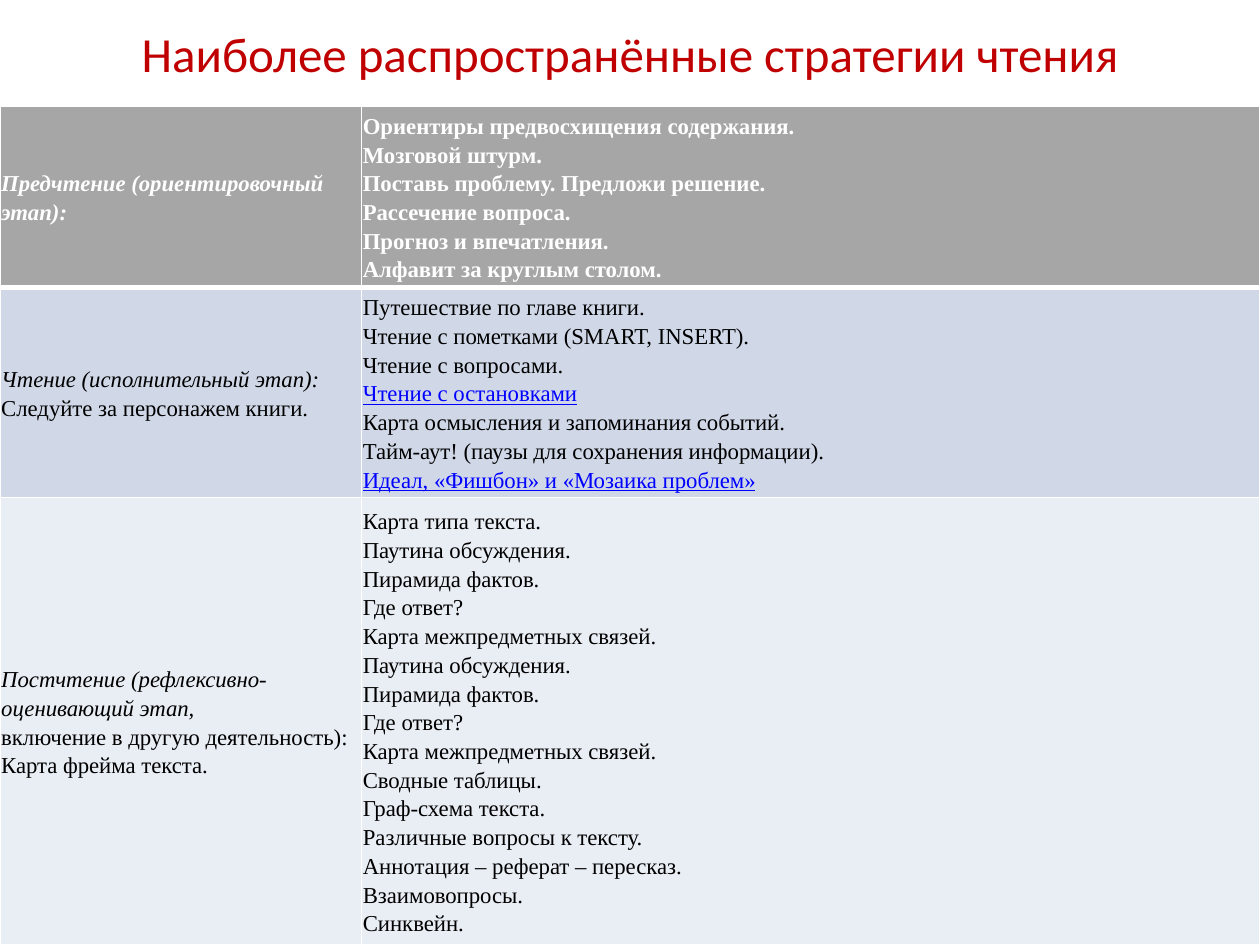
import dataclasses

import lxml.etree
import pptx
import pptx.dml.color
import pptx.enum.text
import pptx.oxml.ns
import pptx.table
import pptx.text.text
import pptx.util

Inches = pptx.util.Inches
Pt = pptx.util.Pt

WHITE = "FFFFFF"
BLACK = "000000"
LINK_BLUE = "0000FF"
COLUMN_WIDTHS = (2.87, 7.13)
CELL_INSET = Inches(0.01)
LINKED = {"Чтение с остановками", "Идеал, «Фишбон» и «Мозаика проблем»"}


@dataclasses.dataclass
class Stage:
    heading: str
    details: list[str]
    strategies: list[str]
    height: float
    fill: str
    is_header: bool = False


DISCUSSION = [
    "Паутина обсуждения.",
    "Пирамида фактов.",
    "Где ответ?",
    "Карта межпредметных связей.",
]

STAGES = [
    Stage(
        "Предчтение (ориентировочный этап):",
        [],
        [
            "Ориентиры предвосхищения содержания.",
            "Мозговой штурм.",
            "Поставь проблему. Предложи решение.",
            "Рассечение вопроса.",
            "Прогноз и впечатления.",
            "Алфавит за круглым столом.",
        ],
        1.44, "A6A6A6", is_header=True,
    ),
    Stage(
        "Чтение (исполнительный этап):",
        ["Следуйте за персонажем книги."],
        [
            "Путешествие по главе книги.",
            "Чтение с пометками (SMART, INSERT).",
            "Чтение с вопросами.",
            "Чтение с остановками",
            "Карта осмысления и запоминания событий.",
            "Тайм-аут! (паузы для сохранения информации).",
            "Идеал, «Фишбон» и «Мозаика проблем»",
        ],
        1.67, "D0D8E8",
    ),
    Stage(
        "Постчтение (рефлексивно-оценивающий этап,",
        ["включение в другую деятельность):", "Карта фрейма текста."],
        [
            "Карта типа текста.",
            *DISCUSSION,
            *DISCUSSION,
            "Сводные таблицы.",
            "Граф-схема текста.",
            "Различные вопросы к тексту.",
            "Аннотация – реферат – пересказ.",
            "Взаимовопросы.",
            "Синквейн.",
        ],
        3.55, "E9EDF4",
    ),
]


def color(value: str) -> pptx.dml.color.RGBColor:
    return pptx.dml.color.RGBColor.from_string(value)


def set_font(paragraph: pptx.text.text._Paragraph, name: str, size: float, value: str) -> None:
    paragraph.font.name = name
    paragraph.font.size = Pt(size)
    paragraph.font.color.rgb = color(value)


def add_borders(cell: pptx.table._Cell, widths: dict[str, float]) -> None:
    """Draw white borders; they must come before the fill in the cell."""
    properties = cell._tc.get_or_add_tcPr()
    for position, (side, width) in enumerate(widths.items()):
        line = lxml.etree.Element(pptx.oxml.ns.qn(f"a:{side}"), w=str(Pt(width)))
        fill = lxml.etree.SubElement(line, pptx.oxml.ns.qn("a:solidFill"))
        lxml.etree.SubElement(fill, pptx.oxml.ns.qn("a:srgbClr"), val=WHITE)
        properties.insert(position, line)


def fill_cell(cell: pptx.table._Cell, stage: Stage, lines: list[str]) -> None:
    cell.margin_left = cell.margin_right = CELL_INSET
    cell.margin_top = cell.margin_bottom = CELL_INSET
    cell.vertical_anchor = pptx.enum.text.MSO_ANCHOR.MIDDLE
    cell.fill.solid()
    cell.fill.fore_color.rgb = color(stage.fill)

    cell.text = "\n".join(lines)
    for paragraph, line in zip(cell.text_frame.paragraphs, lines):
        linked = line in LINKED
        text_color = WHITE if stage.is_header else LINK_BLUE if linked else BLACK
        set_font(paragraph, "Times New Roman", 13, text_color)
        paragraph.line_spacing = 1.15
        paragraph.font.bold = stage.is_header
        paragraph.font.italic = line == stage.heading
        paragraph.font.underline = linked

    # The header's thick bottom edge also serves as the next row's top edge
    if stage.is_header:
        add_borders(cell, {"lnL": 1, "lnR": 1, "lnT": 1, "lnB": 3})
    else:
        add_borders(cell, {"lnL": 1, "lnR": 1, "lnB": 1})


def main() -> None:
    presentation = pptx.Presentation()
    presentation.slide_width = Inches(10)
    presentation.slide_height = Inches(7.5)
    slide = presentation.slides.add_slide(presentation.slide_layouts[6])

    # Table of reading stages
    strategy_table = slide.shapes.add_table(
        len(STAGES), len(COLUMN_WIDTHS), Inches(0), Inches(0.84),
        Inches(sum(COLUMN_WIDTHS)), Inches(sum(stage.height for stage in STAGES)),
    ).table
    for column, width in zip(strategy_table.columns, COLUMN_WIDTHS):
        column.width = Inches(width)
    for row, stage in zip(strategy_table.rows, STAGES):
        row.height = Inches(stage.height)
        fill_cell(row.cells[0], stage, [stage.heading, *stage.details])
        fill_cell(row.cells[1], stage, stage.strategies)

    # Title
    title = slide.shapes.add_textbox(Inches(0.5), Inches(0), Inches(9), Inches(0.84)).text_frame
    title.word_wrap = True
    title.vertical_anchor = pptx.enum.text.MSO_ANCHOR.MIDDLE
    title.text = "Наиболее распространённые стратегии чтения"
    title.paragraphs[0].alignment = pptx.enum.text.PP_ALIGN.CENTER
    set_font(title.paragraphs[0], "Calibri", 28, "C00000")

    presentation.save("out.pptx")


if __name__ == "__main__":
    main()
